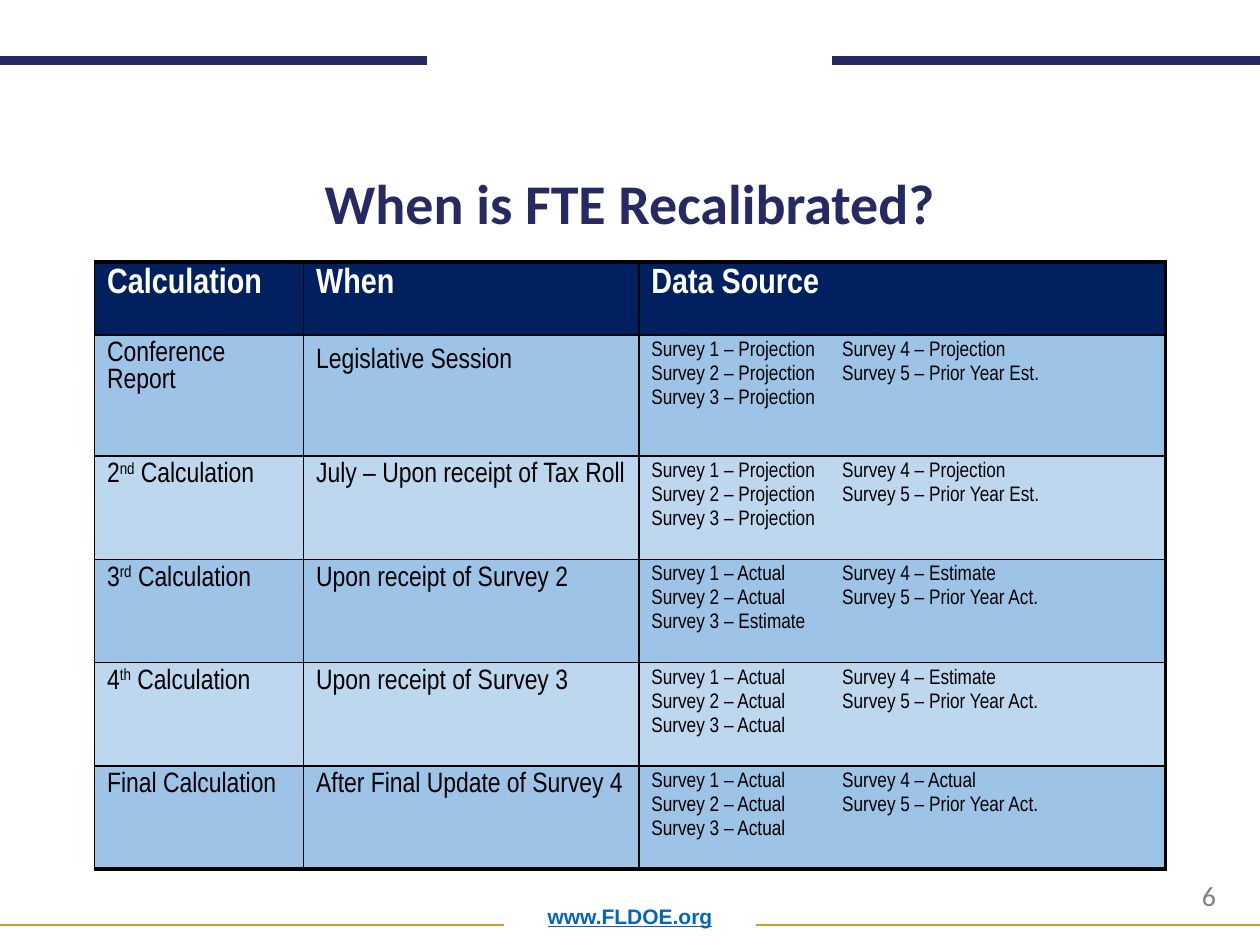
from dataclasses import dataclass

from lxml import etree
from pptx import Presentation
from pptx.dml.color import RGBColor
from pptx.enum.shapes import MSO_CONNECTOR
from pptx.enum.text import MSO_ANCHOR, MSO_AUTO_SIZE, PP_ALIGN
from pptx.oxml.ns import qn
from pptx.util import Pt

STRAIGHT = MSO_CONNECTOR.STRAIGHT
BOTTOM = MSO_ANCHOR.BOTTOM
TOP = MSO_ANCHOR.TOP
CENTER = PP_ALIGN.CENTER
LEFT = PP_ALIGN.LEFT
GROW = MSO_AUTO_SIZE.SHAPE_TO_FIT_TEXT
NO_FIT = MSO_AUTO_SIZE.NONE


@dataclass(frozen=True)
class Theme:
    navy: str = "262A63"
    gold: str = "CD9D2C"
    header: str = "002060"
    bands: tuple = ("9DC3E6", "BDD7EE")
    black: str = "000000"
    white: str = "FFFFFF"
    link: str = "0563C1"
    grey: str = "7F7F7F"
    title_font: str = "Calibri"
    table_font: str = "Arial Narrow"
    link_font: str = "Arial"
    title_size: int = 32
    header_size: int = 20
    body_size: int = 16
    survey_size: int = 12
    link_size: int = 12


THEME = Theme()
SLIDE_WIDTH, SLIDE_HEIGHT = 720, 540
BANNER_Y, FOOTER_Y = 34.56, 528.48
TABLE_LEFT, TABLE_TOP = 54, 149.76
COLUMN_WIDTHS = (119.52, 191.52, 300.96)
ROW_HEIGHTS = (41.76, 69.12) + (59.04,) * 4
SURVEY_TAB = 109
THIN, THICK = 1, 2.25

HEADINGS = ("Calculation", "When", "Data Source")
CALCULATIONS = (
    (("Conference Report",), "Legislative Session",
     ("Projection", "Projection", "Projection", "Projection", "Prior Year Est.")),
    (("2", "nd", " Calculation"), "July – Upon receipt of Tax Roll",
     ("Projection", "Projection", "Projection", "Projection", "Prior Year Est.")),
    (("3", "rd", " Calculation"), "Upon receipt of Survey 2",
     ("Actual", "Actual", "Estimate", "Estimate", "Prior Year Act.")),
    (("4", "th", " Calculation"), "Upon receipt of Survey 3",
     ("Actual", "Actual", "Actual", "Estimate", "Prior Year Act.")),
    (("Final Calculation",), "After Final Update of Survey 4",
     ("Actual", "Actual", "Actual", "Actual", "Prior Year Act.")),
)


def format_runs(paragraph, font_name, size, color, bold=False, underline=False):
    for run in paragraph.runs:
        run.font.name = font_name
        run.font.size = Pt(size)
        run.font.color.rgb = RGBColor.from_string(color)
        run.font.bold = bold
        run.font.underline = underline


def add_rule(slide, start, end, y, color, width):
    rule = slide.shapes.add_connector(STRAIGHT, Pt(start), Pt(y), Pt(end), Pt(y))
    rule.line.color.rgb = RGBColor.from_string(color)
    rule.line.width = Pt(width)
    etree.SubElement(rule._element.spPr, qn("a:effectLst"))


def add_label(slide, text, box, align, anchor, fit, **style):
    label = slide.shapes.add_textbox(*map(Pt, box))
    frame = label.text_frame
    frame.word_wrap = True
    frame.auto_size = fit
    frame.vertical_anchor = anchor
    frame.text = text
    paragraph = frame.paragraphs[0]
    paragraph.alignment = align
    format_runs(paragraph, **style)


def set_title(slide, text):
    title = slide.shapes.title
    title.left, title.top, title.width, title.height = map(
        Pt, (49.68, 76.32, 620.64, 62.64))
    frame = title.text_frame
    frame.auto_size = NO_FIT
    frame.vertical_anchor = BOTTOM
    frame.text = text
    paragraph = frame.paragraphs[0]
    paragraph.alignment = CENTER
    paragraph.line_spacing = 0.9
    format_runs(paragraph, THEME.title_font, THEME.title_size, THEME.navy, bold=True)


def set_borders(cell, widths):
    properties = cell._tc.get_or_add_tcPr()
    for side, width in zip("LRTB", widths):
        border = etree.SubElement(properties, qn(f"a:ln{side}"), w=str(Pt(width)))
        fill = etree.SubElement(border, qn("a:solidFill"))
        etree.SubElement(fill, qn("a:srgbClr"), val=THEME.black)


def add_survey_tab(paragraph):
    tabs = etree.SubElement(paragraph._p.get_or_add_pPr(), qn("a:tabLst"))
    etree.SubElement(tabs, qn("a:tab"), pos=str(Pt(SURVEY_TAB)), algn="l")


def write_calculation(cell, parts):
    paragraph = cell.text_frame.paragraphs[0]
    for index, part in enumerate(parts):
        run = paragraph.add_run()
        run.text = part
        if index == 1:
            run._r.get_or_add_rPr().set("baseline", "30000")
    format_runs(paragraph, THEME.table_font, THEME.body_size, THEME.black)


def write_surveys(cell, sources):
    surveys = [f"Survey {number} – {source}"
               for number, source in enumerate(sources, start=1)]
    lines = [f"{surveys[0]}\t{surveys[3]}", f"{surveys[1]}\t{surveys[4]}", surveys[2]]
    cell.text_frame.text = "\n".join(lines)
    for index, paragraph in enumerate(cell.text_frame.paragraphs):
        add_survey_tab(paragraph)
        if index:
            paragraph.space_before = Pt(2.4)
        format_runs(paragraph, THEME.table_font, THEME.survey_size, THEME.black)


def write_text(cell, text, size, color, bold=False):
    cell.text_frame.text = text
    format_runs(cell.text_frame.paragraphs[0], THEME.table_font, size, color, bold)


def style_cells(table):
    last_row, last_column = len(ROW_HEIGHTS) - 1, len(COLUMN_WIDTHS) - 1
    for r in range(last_row + 1):
        for c in range(last_column + 1):
            cell = table.cell(r, c)
            set_borders(cell, (THIN, THICK if c == last_column else THIN,
                               THICK if r == 0 else THIN,
                               THICK if r == last_row else THIN))
            color = THEME.bands[(r - 1) % 2] if r else THEME.header
            cell.fill.solid()
            cell.fill.fore_color.rgb = RGBColor.from_string(color)


def add_calculation_table(slide):
    table = slide.shapes.add_table(
        len(ROW_HEIGHTS), len(COLUMN_WIDTHS), Pt(TABLE_LEFT), Pt(TABLE_TOP),
        Pt(sum(COLUMN_WIDTHS)), Pt(sum(ROW_HEIGHTS))).table
    table.horz_banding = False
    for column, width in zip(table.columns, COLUMN_WIDTHS):
        column.width = Pt(width)
    for row, height in zip(table.rows, ROW_HEIGHTS):
        row.height = Pt(height)
    style_cells(table)
    for c, heading in enumerate(HEADINGS):
        write_text(table.cell(0, c), heading, THEME.header_size, THEME.white, bold=True)
    for r, (calculation, timing, sources) in enumerate(CALCULATIONS, start=1):
        write_calculation(table.cell(r, 0), calculation)
        write_text(table.cell(r, 1), timing, THEME.body_size, THEME.black)
        write_surveys(table.cell(r, 2), sources)
    table.cell(1, 1).margin_top = Pt(7.2)


def main():
    deck = Presentation()
    deck.slide_width, deck.slide_height = Pt(SLIDE_WIDTH), Pt(SLIDE_HEIGHT)
    slide = deck.slides.add_slide(deck.slide_layouts[5])
    add_label(slide, "www.FLDOE.org", (49.68, 504, 620.64, 30.24), CENTER, BOTTOM,
              NO_FIT, font_name=THEME.link_font, size=THEME.link_size,
              color=THEME.link, bold=True, underline=True)
    for y, color, width, left_end, right_start in (
            (BANNER_Y, THEME.navy, 5, 244.08, 475.2),
            (FOOTER_Y, THEME.gold, 1, 288, 432)):
        add_rule(slide, left_end, 0, y, color, width)
        add_rule(slide, SLIDE_WIDTH, right_start, y, color, width)
    add_label(slide, "6", (679.68, 498.24, 37.44, 26.64), LEFT, TOP, GROW,
              font_name=THEME.title_font, size=THEME.body_size, color=THEME.grey)
    set_title(slide, "When is FTE Recalibrated?")
    add_calculation_table(slide)
    deck.save("out.pptx")


if __name__ == "__main__":
    main()
